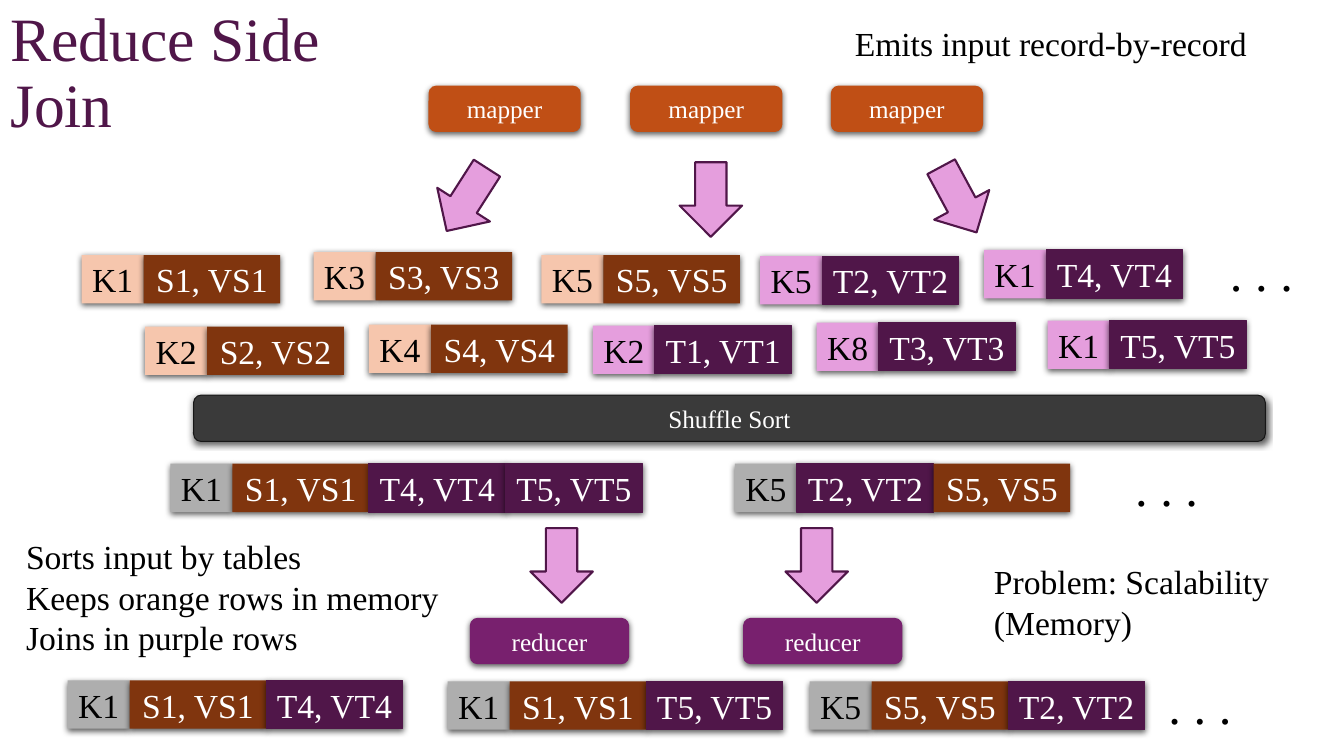
from lxml import etree
from pptx import Presentation
from pptx.dml.color import RGBColor
from pptx.enum.shapes import MSO_SHAPE
from pptx.enum.text import MSO_ANCHOR, MSO_AUTO_SIZE, PP_ALIGN
from pptx.oxml.ns import qn
from pptx.util import Inches, Pt

RECT, ROUNDED, ARROW = MSO_SHAPE.RECTANGLE, MSO_SHAPE.ROUNDED_RECTANGLE, MSO_SHAPE.DOWN_ARROW
MIDDLE, LEFT, CENTER = MSO_ANCHOR.MIDDLE, PP_ALIGN.LEFT, PP_ALIGN.CENTER

BLACK = RGBColor(0x00, 0x00, 0x00)
WHITE = RGBColor(0xFF, 0xFF, 0xFF)
ORANGE = RGBColor(0xC0, 0x4F, 0x15)
BROWN = RGBColor(0x80, 0x35, 0x0E)
PEACH = RGBColor(0xF6, 0xC6, 0xAD)
PLUM = RGBColor(0x50, 0x16, 0x49)
PURPLE = RGBColor(0x78, 0x20, 0x6E)
PINK = RGBColor(0xE5, 0x9E, 0xDD)
GRAY = RGBColor(0xAE, 0xAE, 0xAE)
CHARCOAL = RGBColor(0x3A, 0x3A, 0x3A)
BAR_EDGE = RGBColor(0x17, 0x17, 0x17)
FONT = "Times New Roman"

# Content
TITLE = "Reduce Side Join"
# label, left, top, width, fill, line
STAGES = [
    ("mapper", 4.25, 0.85, 1.51, ORANGE, None),
    ("mapper", 6.25, 0.85, 1.51, ORANGE, None),
    ("mapper", 8.24, 0.85, 1.51, ORANGE, None),
    ("Shuffle Sort", 1.92, 3.92, 10.63, CHARCOAL, BAR_EDGE),
    ("reducer", 4.66, 6.13, 1.58, PURPLE, None),
    ("reducer", 7.37, 6.13, 1.58, PURPLE, None),
]
# left, top, rotation
ARROWS = [(6.74, 1.61, 0), (4.32, 1.61, 32.6), (9.2, 1.61, 331.7),
          (5.26, 5.24, 0), (7.79, 5.24, 0)]
# left, top, key fill, key, values
RECORDS = [
    (0.81, 2.53, PEACH, "K1", ["S1, VS1"]),
    (3.11, 2.5, PEACH, "K3", ["S3, VS3"]),
    (1.44, 3.24, PEACH, "K2", ["S2, VS2"]),
    (3.66, 3.22, PEACH, "K4", ["S4, VS4"]),
    (5.37, 2.53, PEACH, "K5", ["S5, VS5"]),
    (5.88, 3.23, PINK, "K2", ["T1, VT1"]),
    (7.54, 2.54, PINK, "K5", ["T2, VT2"]),
    (8.1, 3.2, PINK, "K8", ["T3, VT3"]),
    (9.76, 2.48, PINK, "K1", ["T4, VT4"]),
    (10.39, 3.18, PINK, "K1", ["T5, VT5"]),
    (1.69, 4.6, GRAY, "K1", ["S1, VS1", "T4, VT4", "T5, VT5"]),
    (7.29, 4.6, GRAY, "K5", ["T2, VT2", "S5, VS5"]),
    (8.03, 6.76, GRAY, "K5", ["S5, VS5", "T2, VT2"]),
    (0.67, 6.75, GRAY, "K1", ["S1, VS1", "T4, VT4"]),
    (4.44, 6.76, GRAY, "K1", ["S1, VS1", "T5, VT5"]),
]
# text, left, top, width, height, size
NOTES = [
    ("Emits input record-by-record", 8.38, 0.18, 4.33, 0.5, 24),
    ("Sorts input by tables\nKeeps orange rows in memory\nJoins in purple rows",
     0.16, 5.27, 4.33, 1.31, 24),
    ("Problem: Scalability (Memory)", 9.76, 5.52, 3.18, 0.91, 24),
    (". . .", 12.1, 2.34, 1.06, 0.71, 36),
    (". . .", 11.16, 4.48, 1.06, 0.71, 36),
    (". . .", 11.49, 6.64, 1.06, 0.71, 36),
]
STAGE_HEIGHT = 0.46
KEY_WIDTH, VALUE_WIDTH, CELL_HEIGHT = 0.615, 1.355, 0.48


def write(shape, text, size, color, align):
    frame = shape.text_frame
    frame.text = text
    frame.word_wrap = True
    for para in frame.paragraphs:
        para.alignment = align
        para.font.name = FONT
        para.font.size = Pt(size)
        para.font.color.rgb = color


def add_block(shapes, kind, left, top, width, height, fill, line=None, weight=0.75):
    block = shapes.add_shape(kind, Inches(left), Inches(top), Inches(width), Inches(height))
    block.fill.solid()
    block.fill.fore_color.rgb = fill
    if line is None:
        block.line.fill.background()
    else:
        block.line.color.rgb = line
        block.line.width = Pt(weight)
    block.shadow.inherit = False
    return block


def add_label_box(shapes, kind, left, top, width, height, text, size, color, fill, line=None):
    box = add_block(shapes, kind, left, top, width, height, fill, line)
    effects = box._element.spPr.find(qn("a:effectLst"))
    shadow = etree.SubElement(effects, qn("a:outerShdw"), blurRad=str(Pt(4.5)),
                              dist=str(Pt(1.5)), dir="5400000", algn="ctr", rotWithShape="0")
    tint = etree.SubElement(shadow, qn("a:srgbClr"), val="000000")
    etree.SubElement(tint, qn("a:alpha"), val="63000")
    write(box, text, size, color, CENTER)
    frame = box.text_frame
    frame.vertical_anchor = MIDDLE
    frame.margin_left = frame.margin_right = 0


deck = Presentation()
deck.slide_width, deck.slide_height = Inches(13.33), Inches(7.5)
page = deck.slides.add_slide(deck.slide_layouts[5])

# Title
title = page.shapes.title
title.left, title.top, title.width, title.height = 0, 0, Inches(3.41), Inches(1.48)
write(title, TITLE, 44, PLUM, LEFT)
title.text_frame.vertical_anchor = MIDDLE
title.text_frame.auto_size = MSO_AUTO_SIZE.NONE
title.text_frame.paragraphs[0].line_spacing = 0.9

# Processing stages
for label, left, top, width, fill, line in STAGES:
    add_label_box(page.shapes, ROUNDED, left, top, width, STAGE_HEIGHT,
                  label, 18, WHITE, fill, line)

# Flow arrows
for left, top, rotation in ARROWS:
    arrow = add_block(page.shapes, ARROW, left, top, 0.62, 0.74, PINK, PLUM, 1.5)
    arrow.rotation = rotation

# Records: a key cell followed by value cells, brown for S and plum for T
for left, top, key_fill, key, values in RECORDS:
    cells = page.shapes.add_group_shape().shapes
    add_label_box(cells, RECT, left, top, KEY_WIDTH, CELL_HEIGHT, key, 24, BLACK, key_fill)
    for index, value in enumerate(values):
        fill, line = (BROWN, None) if value.startswith("S") else (PLUM, PLUM)
        add_label_box(cells, RECT, left + KEY_WIDTH + index * VALUE_WIDTH, top,
                      VALUE_WIDTH, CELL_HEIGHT, value, 24, WHITE, fill, line)

# Remarks and ellipses
for text, left, top, width, height, size in NOTES:
    note = page.shapes.add_textbox(Inches(left), Inches(top), Inches(width), Inches(height))
    write(note, text, size, BLACK, LEFT)

deck.save("out.pptx")
